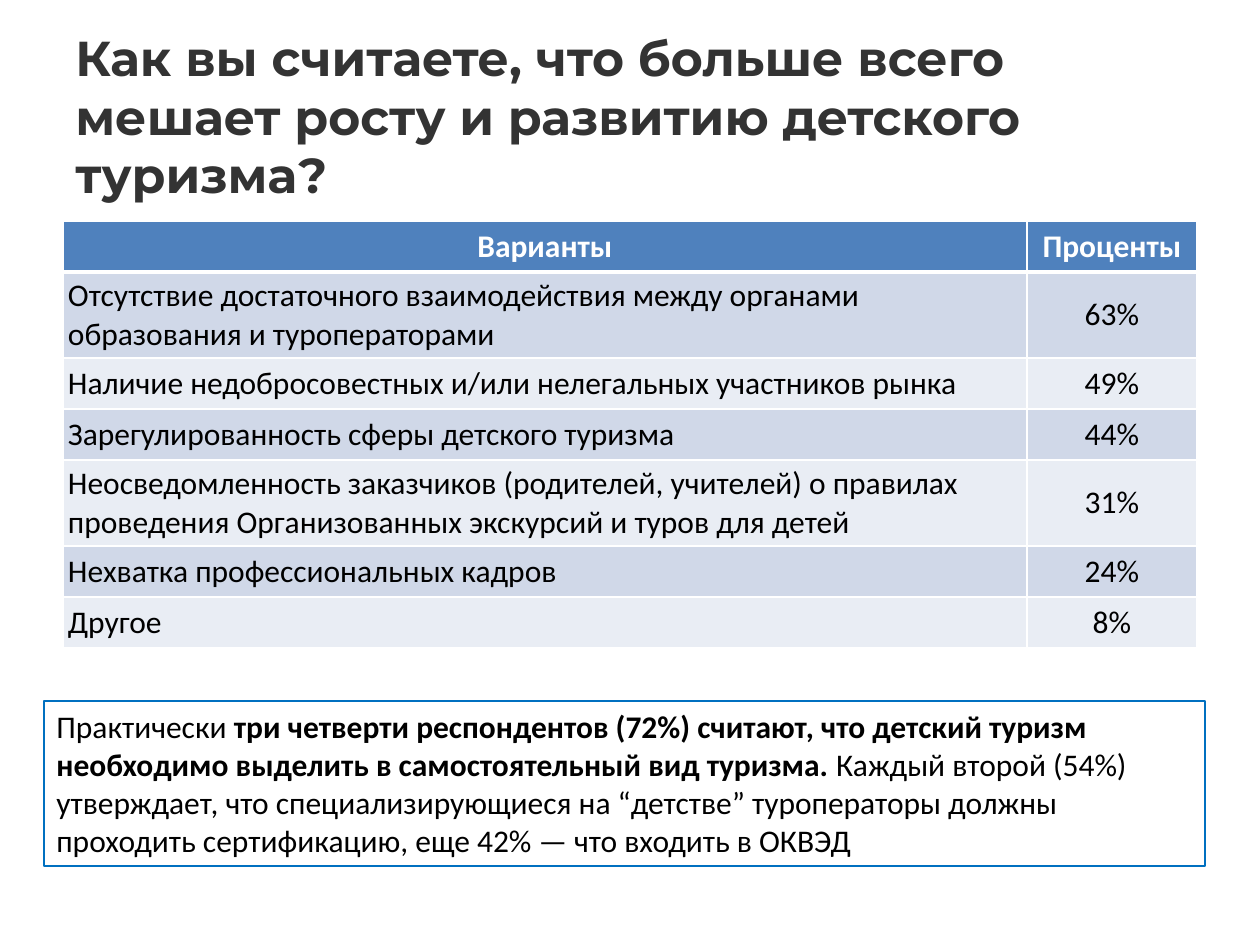
from lxml.etree import SubElement
from pptx import Presentation
from pptx.dml.color import RGBColor
from pptx.enum.shapes import MSO_SHAPE as Shape
from pptx.enum.text import MSO_ANCHOR as Anchor, PP_ALIGN as Align
from pptx.oxml.ns import qn
from pptx.util import Emu, Pt

SCALE = 914400 / 126
WHITE = RGBColor(0xFF, 0xFF, 0xFF)
BLACK = RGBColor(0x00, 0x00, 0x00)
TITLE_GRAY = RGBColor(0x33, 0x33, 0x33)
HEADER_BLUE = RGBColor(0x4F, 0x81, 0xBD)
BANDS = (RGBColor(0xD0, 0xD8, 0xE8), RGBColor(0xE9, 0xED, 0xF4))
OUTLINE_BLUE = RGBColor(0x00, 0x70, 0xC0)

TITLE = "Как вы считаете, что больше всего мешает росту и развитию детского туризма?"
HEADER = ("Варианты", "Проценты")
ANSWERS = (
    ("Отсутствие достаточного взаимодействия между органами образования и туроператорами", "63%"),
    ("Наличие недобросовестных и/или нелегальных участников рынка", "49%"),
    ("Зарегулированность сферы детского туризма", "44%"),
    ("Неосведомленность заказчиков (родителей, учителей) о правилах проведения "
     "Организованных экскурсий и туров для детей", "31%"),
    ("Нехватка профессиональных кадров", "24%"),
    ("Другое", "8%"),
)
CONCLUSION = (
    ("Практически ", False),
    ("три четверти респондентов (72%) считают, что детский туризм необходимо "
     "выделить в самостоятельный вид туризма.", True),
    (" Каждый второй (54%) утверждает, что специализирующиеся на “детстве” туроператоры "
     "должны проходить сертификацию, еще 42% — что входить в ОКВЭД", False),
)
COLUMN_WIDTHS = (964, 170)
ROW_HEIGHTS = (51, 86, 51, 51, 86, 51, 51)


def px(*lengths):
    """Turn whole pixels into a list of EMU lengths."""
    return [Emu(round(length * SCALE)) for length in lengths]


def add_run(paragraph, text, color, bold=False, size=18, font="Calibri"):
    """Append one formatted run to a paragraph."""
    run = paragraph.add_run()
    run.text = text
    run.font.name = font
    run.font.size = Pt(size)
    run.font.bold = bold
    run.font.color.rgb = color


def add_title(slide):
    """Add the question as the slide heading."""
    frame = slide.shapes.add_textbox(*px(63, 50, 1113, 131)).text_frame
    frame.word_wrap = True
    frame.vertical_anchor = Anchor.MIDDLE
    add_run(frame.paragraphs[0], TITLE, TITLE_GRAY, True, 28, "Montserrat")


def set_borders(cell, top, bottom):
    """Draw white borders around a cell, with widths in points."""
    properties = cell._tc.get_or_add_tcPr()
    sides = (("a:lnL", 1), ("a:lnR", 1), ("a:lnT", top), ("a:lnB", bottom))
    for index, (tag, width) in enumerate(sides):
        line = SubElement(properties, qn(tag), w=str(Pt(width)))
        fill = SubElement(line, qn("a:solidFill"))
        SubElement(fill, qn("a:srgbClr"), val=str(WHITE))
        properties.insert(index, line)


def fill_cell(cell, text, fill, color, bold, align):
    """Write and style one table cell."""
    cell.fill.solid()
    cell.fill.fore_color.rgb = fill
    cell.vertical_anchor = Anchor.MIDDLE
    margin, = px(5)
    cell.margin_left = cell.margin_right = margin
    cell.margin_top = cell.margin_bottom = margin
    paragraph = cell.text_frame.paragraphs[0]
    paragraph.alignment = align
    add_run(paragraph, text, color, bold)


def add_answers_table(slide):
    """Add the table of answers and their shares."""
    rows = (HEADER,) + ANSWERS
    frame = px(63, 221, sum(COLUMN_WIDTHS), sum(ROW_HEIGHTS))
    table = slide.shapes.add_table(len(rows), len(HEADER), *frame).table
    for column, width in zip(table.columns, px(*COLUMN_WIDTHS)):
        column.width = width
    for row, height in zip(table.rows, px(*ROW_HEIGHTS)):
        row.height = height
    for row_index, texts in enumerate(rows):
        is_header = row_index == 0
        fill = HEADER_BLUE if is_header else BANDS[(row_index - 1) % 2]
        color = WHITE if is_header else BLACK
        for column_index, text in enumerate(texts):
            cell = table.cell(row_index, column_index)
            align = Align.CENTER if is_header or column_index else Align.LEFT
            fill_cell(cell, text, fill, color, is_header, align)
            set_borders(cell, 3 if row_index == 1 else 1, 3 if is_header else 1)


def add_conclusion(slide):
    """Add the outlined box with the summary."""
    shape = slide.shapes.add_shape(Shape.RECTANGLE, *px(44, 701, 1161, 165))
    shape.shadow.inherit = False
    shape.fill.background()
    shape.line.color.rgb = OUTLINE_BLUE
    shape.line.width = Pt(0.75)
    frame = shape.text_frame
    frame.word_wrap = True
    frame.vertical_anchor = Anchor.TOP
    paragraph = frame.paragraphs[0]
    paragraph.alignment = Align.LEFT
    for text, bold in CONCLUSION:
        add_run(paragraph, text, BLACK, bold)


def main():
    """Build and save the presentation."""
    presentation = Presentation()
    presentation.slide_width, presentation.slide_height = px(1260, 945)
    slide = presentation.slides.add_slide(presentation.slide_layouts[6])
    add_title(slide)
    add_answers_table(slide)
    add_conclusion(slide)
    presentation.save("out.pptx")


if __name__ == "__main__":
    main()
